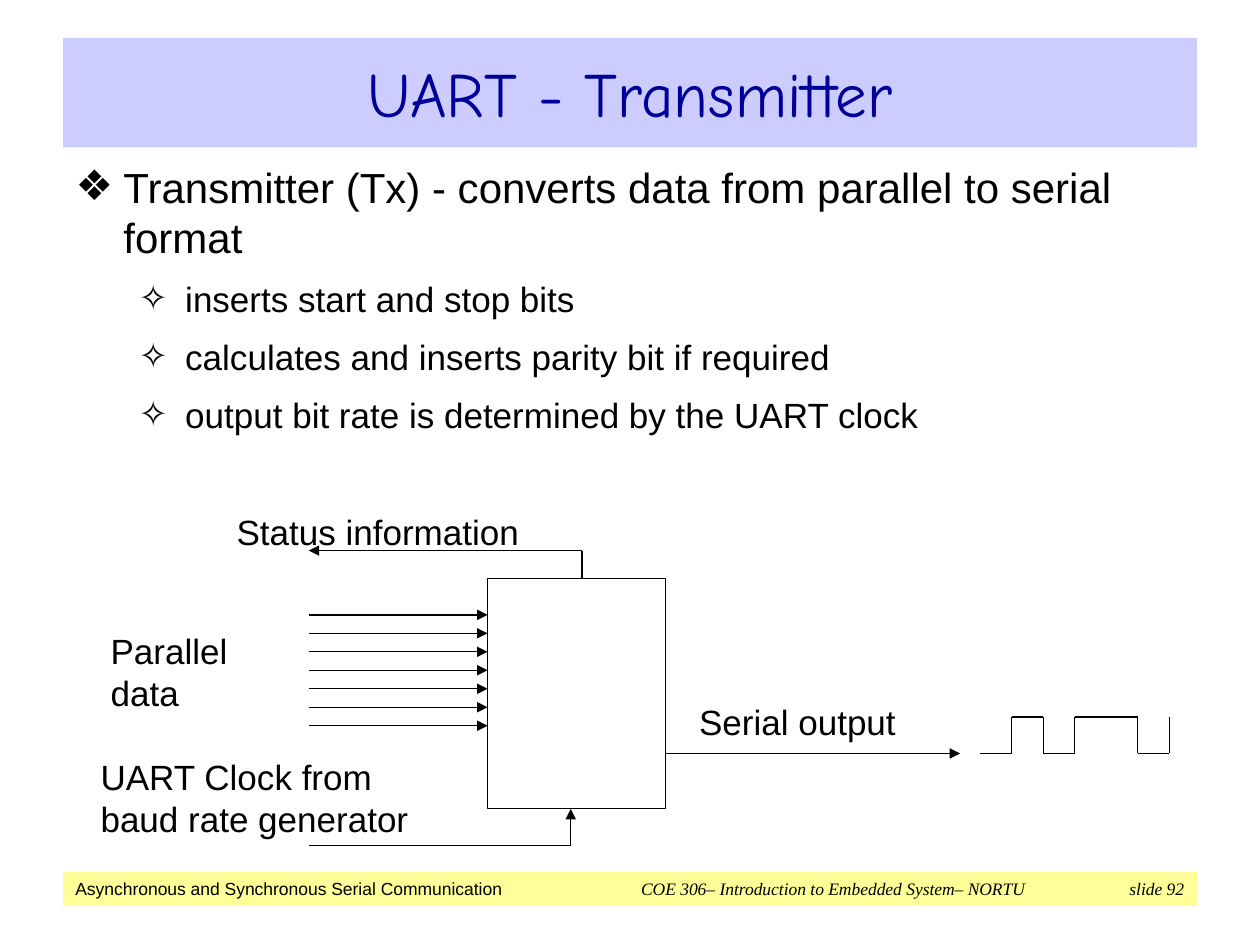
from lxml.etree import SubElement
from pptx import Presentation
from pptx.dml.color import RGBColor
from pptx.enum.shapes import MSO_CONNECTOR as Link, MSO_SHAPE as Form
from pptx.enum.text import MSO_ANCHOR as Anchor, MSO_AUTO_SIZE as Fit, PP_ALIGN as Align
from pptx.oxml.ns import qn
from pptx.util import Inches, Pt

WIDE, HIGH = 10, 7.5
EDGE, SPAN = 0.05 * WIDE, 0.9 * WIDE
LEFT, BOX_L, BOX_R = 2.45, 3.87, 5.28
BOX_T, BOX_B = 4.59, 6.42
STEP, LOW, TOP = 0.25, 5.98, 5.69
LABELS = [
    ("Serial output", 5.45, 5.51, 2.08, 0.38),
    ("Parallel data", 0.78, 4.95, 1.5, 0.67),
    ("UART Clock from\vbaud rate generator", 0.7, 5.95, 3.17, 0.67),
    ("Status information", 1.78, 4, 3.33, 0.38),
]
POINTS = [
    (0, "Transmitter (Tx) - converts data from parallel to serial format"),
    (1, "inserts start and stop bits"),
    (1, "calculates and inserts parity bit if required"),
    (1, "output bit rate is determined by the UART clock"),
]
LEVELS = [("❖", 0.38, 0.38, 24), ("✧", 0.87, 0.37, 20)]


def paint(color, code):
    """Set a colour format from a hex string."""
    color.rgb = RGBColor.from_string(code)


def fill(shape, code):
    """Fill a shape with one colour."""
    shape.fill.solid()
    paint(shape.fill.fore_color, code)


def style(run, size, face="Arial", code="000000", slant=False):
    """Format the font of a run."""
    font = run.font
    font.size, font.name, font.italic = Pt(size), face, slant
    paint(font.color, code)


def place(shape, x, y, w, h):
    """Move and size a shape in inches."""
    shape.left, shape.top, shape.width, shape.height = map(Inches, (x, y, w, h))


def block(slide, x, y, w, h):
    """Add a plain rectangle without fill or line."""
    shape = slide.shapes.add_shape(Form.RECTANGLE, *map(Inches, (x, y, w, h)))
    shape.shadow.inherit = False
    shape.fill.background()
    shape.line.fill.background()
    return shape


def wire(slide, start, end, arrow=False):
    """Draw a thin black line, with an arrowhead at its end if asked."""
    line = slide.shapes.add_connector(Link.STRAIGHT, *map(Inches, start + end))
    line.line.width = Pt(0.75)
    paint(line.line.color, "000000")
    props = line._element.spPr
    if arrow:
        SubElement(props.find(qn("a:ln")), qn("a:tailEnd"), type="triangle")
    SubElement(props, qn("a:effectLst"))


def path(slide, dots, arrow=False):
    """Join points with lines, the last of which may end in an arrow."""
    for i, (start, end) in enumerate(zip(dots, dots[1:]), 2):
        wire(slide, start, end, arrow and i == len(dots))


def label(slide, text, x, y, w, h):
    """Add a text label to the diagram."""
    box = slide.shapes.add_textbox(*map(Inches, (x, y, w, h)))
    frame = box.text_frame
    frame.word_wrap = True
    frame.text = text
    for run in frame.paragraphs[0].runs:
        style(run, 20)


def title(slide):
    """Format the title band."""
    shape = slide.shapes.title
    place(shape, EDGE, 0.04 * HIGH, SPAN, 0.87)
    fill(shape, "CCCCFF")
    frame = shape.text_frame
    frame.text = "UART - Transmitter"
    frame.vertical_anchor = Anchor.MIDDLE
    frame.paragraphs[0].alignment = Align.CENTER
    style(frame.paragraphs[0].runs[0], 36, "Comic Neue", "000099")


def body(slide):
    """Fill the body with the two-level list."""
    shape = slide.placeholders[1]
    place(shape, EDGE, 1.23, SPAN, 5.62)
    frame = shape.text_frame
    frame.auto_size = Fit.NONE
    frame.text = "\n".join(text for _, text in POINTS)
    for i, (para, (level, _)) in enumerate(zip(frame.paragraphs, POINTS)):
        mark, margin, hang, size = LEVELS[level]
        para.level = level
        para.space_before = Pt(9 if i else 0)
        props = para._p.get_or_add_pPr()
        props.set("marL", str(Inches(margin)))
        props.set("indent", str(-Inches(hang)))
        SubElement(props, qn("a:buChar"), char=mark)
        style(para.runs[0], size)


def footer(slide):
    """Add the footer band with its three tabbed parts."""
    shape = block(slide, EDGE, 6.92, SPAN, 0.27)
    fill(shape, "FFFF99")
    frame = shape.text_frame
    frame.margin_top = frame.margin_bottom = 0
    frame.vertical_anchor = Anchor.MIDDLE
    para = frame.paragraphs[0]
    para.alignment = Align.LEFT
    tabs = SubElement(para._p.get_or_add_pPr(), qn("a:tabLst"))
    for spot, side in ((4.49, "l"), (8.8, "r")):
        SubElement(tabs, qn("a:tab"), pos=str(Inches(spot)), algn=side)
    first, rest = para.add_run(), para.add_run()
    first.text = "Asynchronous and Synchronous Serial Communication"
    rest.text = "\tCOE 306– Introduction to Embedded System– NORTU\tslide 92"
    style(first, 10)
    style(rest, 10, "Times New Roman", slant=True)


def wave(slide, bits):
    """Draw a square wave, one step per bit."""
    dots = []
    for i, bit in enumerate(bits):
        x, y = 7.78 + i * STEP, TOP if bit == "1" else LOW
        if dots and dots[-1][1] != y:
            dots.append((x, y))
        elif not dots:
            dots.append((x, y))
        if i < len(bits) - 1:
            dots.append((x + STEP, y))
    path(slide, dots)


def diagram(slide):
    """Draw the transmitter with its inputs and outputs."""
    box = block(slide, BOX_L, BOX_T, BOX_R - BOX_L, BOX_B - BOX_T)
    box.line.width = Pt(0.75)
    fill(box.line, "000000")
    for i in range(7):
        y = 4.88 + i * 0.88 / 6
        wire(slide, (LEFT, y), (BOX_L, y), True)
    path(slide, [(BOX_R, LOW), (7.62, LOW)], True)
    path(slide, [(LEFT, 6.71), (4.53, 6.71), (4.53, BOX_B)], True)
    path(slide, [(4.62, BOX_T), (4.62, 4.37), (LEFT, 4.37)], True)
    wave(slide, "0101101")
    for item in LABELS:
        label(slide, *item)


def main():
    """Build and save the slide."""
    deck = Presentation()
    deck.slide_width, deck.slide_height = Inches(WIDE), Inches(HIGH)
    slide = deck.slides.add_slide(deck.slide_layouts[1])
    footer(slide)
    title(slide)
    body(slide)
    diagram(slide)
    deck.save("out.pptx")


if __name__ == "__main__":
    main()
